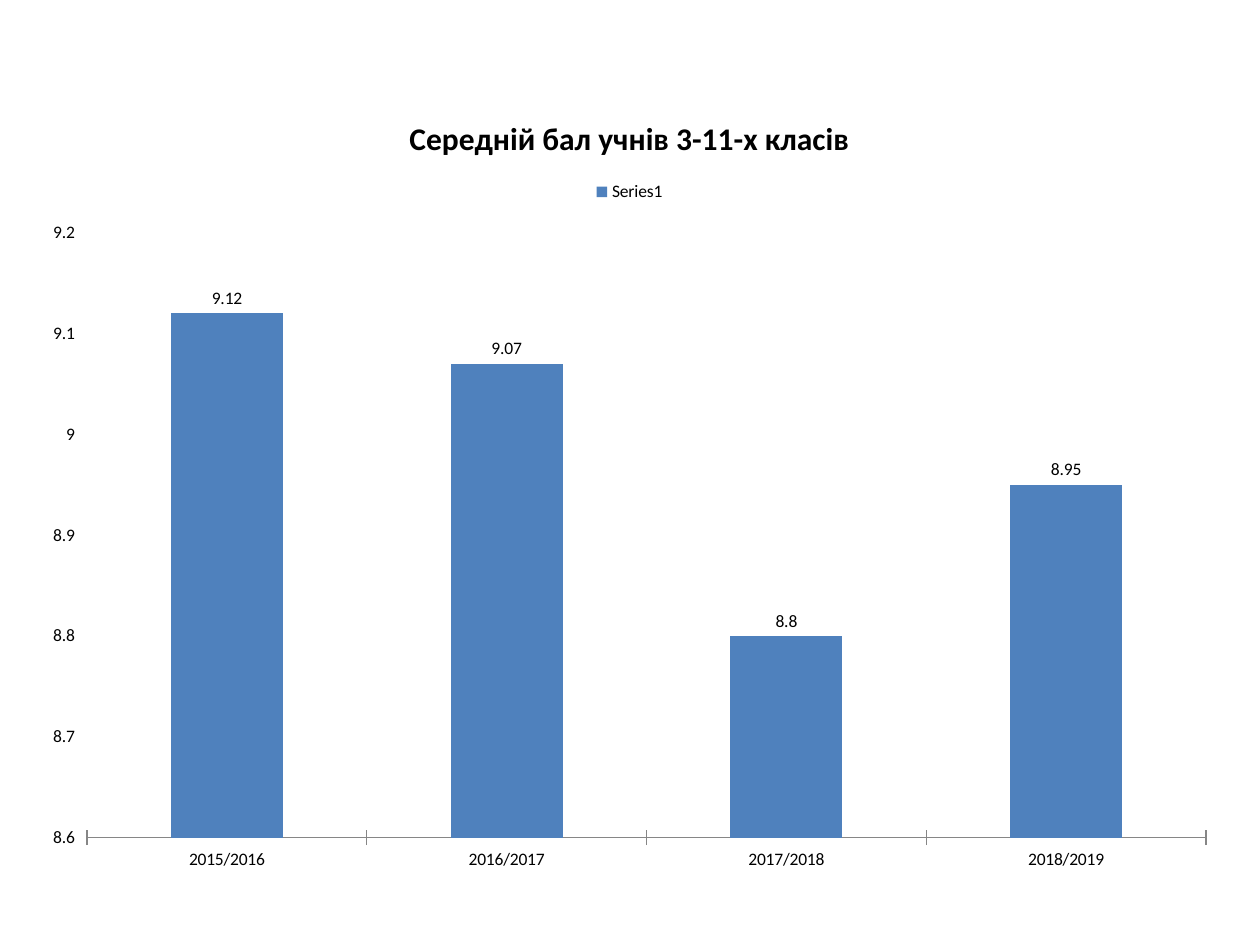
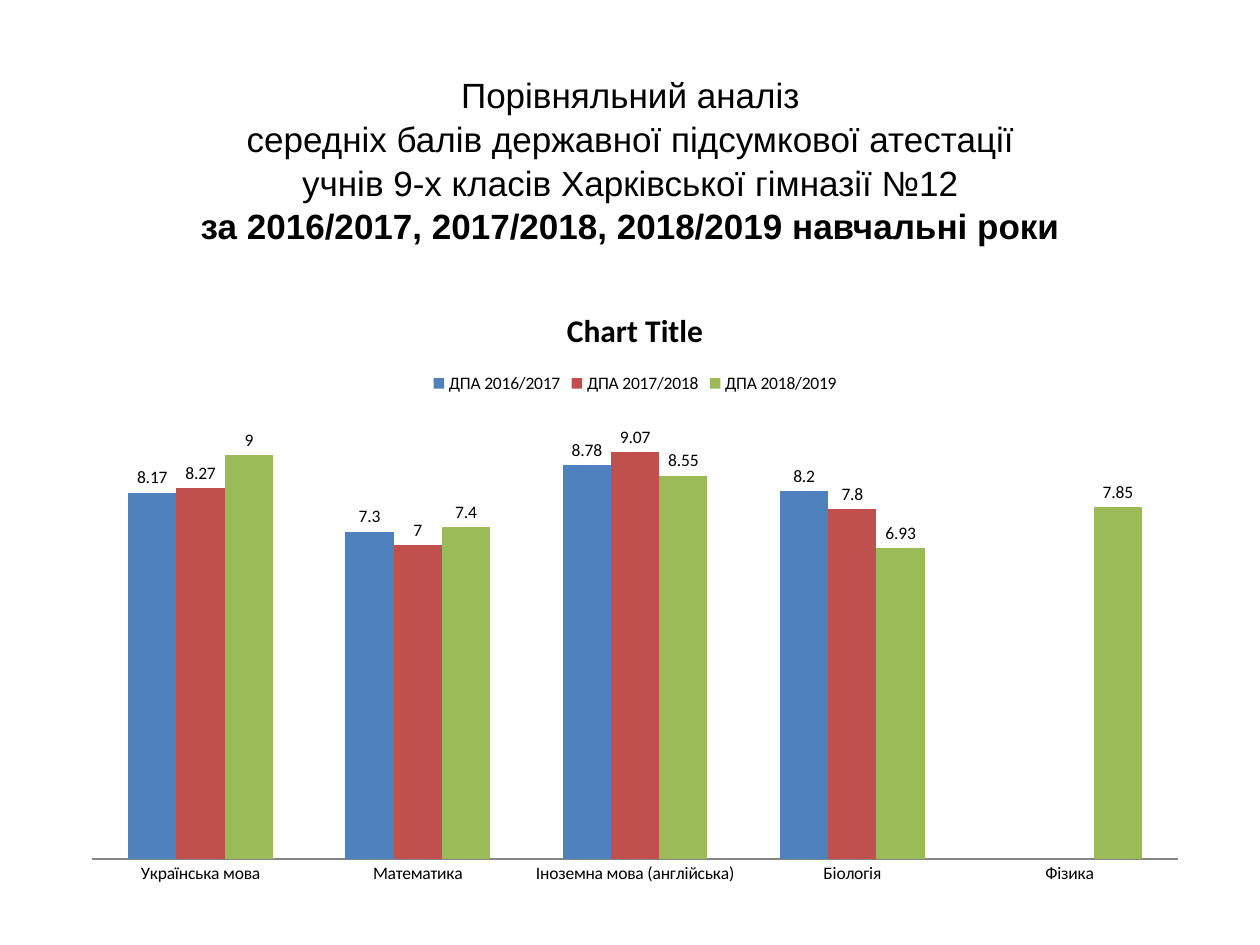
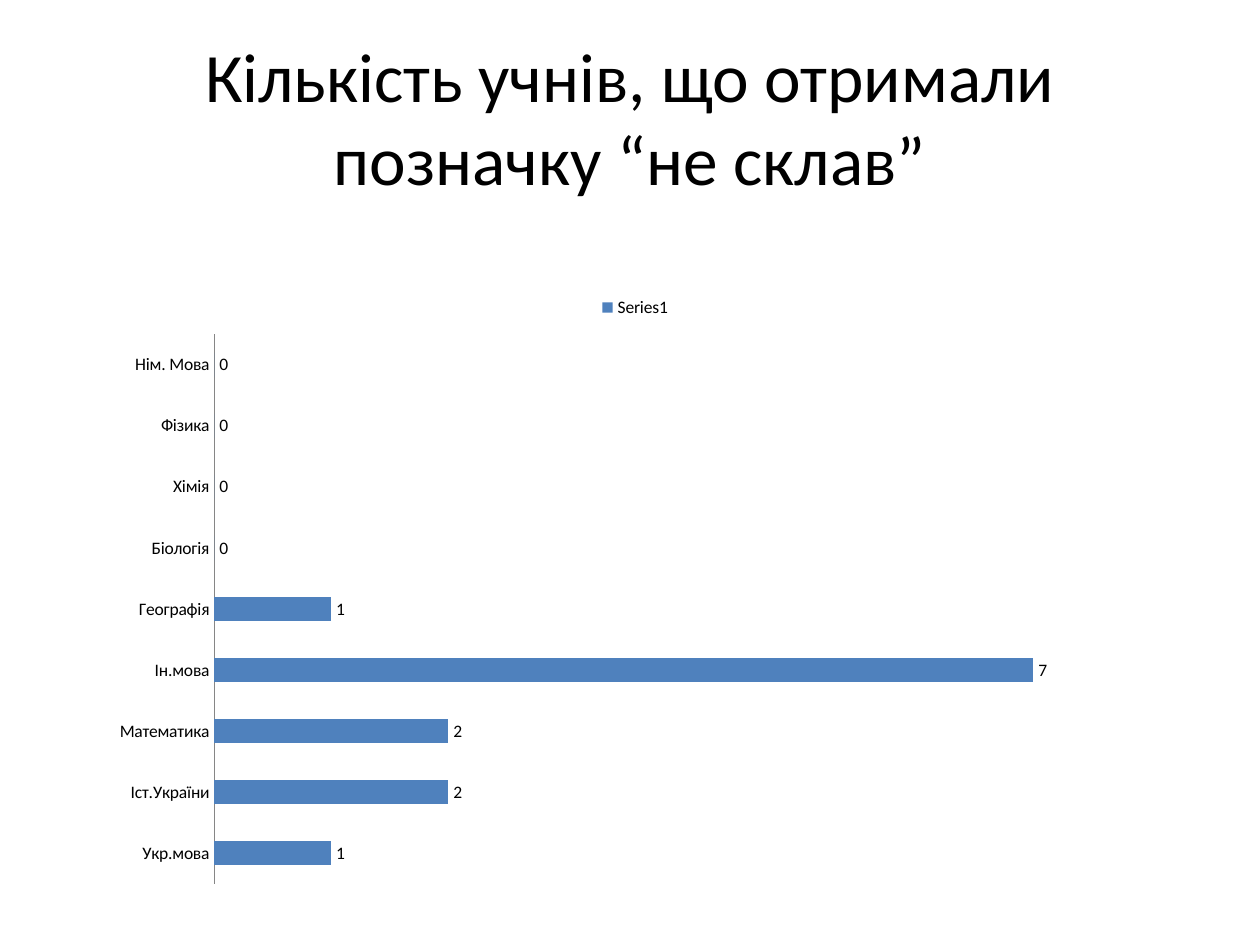
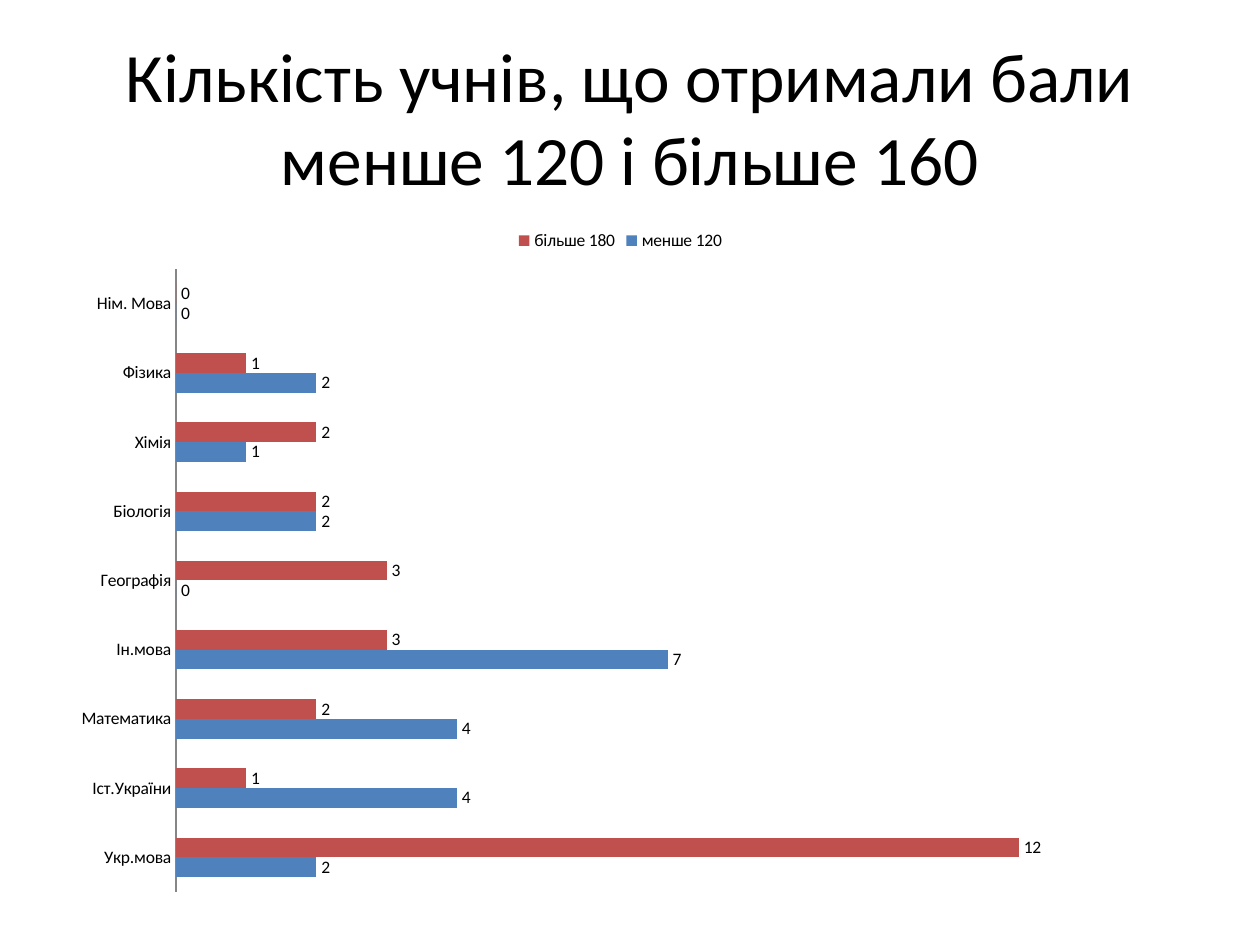
from pptx import Presentation
from pptx.chart.data import CategoryChartData
from pptx.dml.color import RGBColor
from pptx.enum.chart import (XL_CHART_TYPE as CT, XL_LABEL_POSITION as LP,
                             XL_LEGEND_POSITION as LEG, XL_TICK_MARK as TICK)
from pptx.enum.text import MSO_ANCHOR, MSO_AUTO_SIZE, PP_ALIGN
from pptx.util import Pt

BLACK, WHITE, AXIS = "000000", "FFFFFF", "868686"
BLUE, RED, GREEN = "4F81BD", "C0504D", "9BBB59"
FONT = "Calibri"
TITLE_ONLY, BLANK = 5, 6
TITLE_BOX = (36, 21.6, 648, 90)
SUBJECTS = ["Укр.мова", "Іст.України", "Математика", "Ін.мова", "Географія",
            "Біологія", "Хімія", "Фізика", "Нім. Мова"]


def rgb(value):
    return RGBColor.from_string(value)


def set_font(font, size, name=FONT, bold=False):
    font.size, font.name, font.bold = Pt(size), name, bold
    font.color.rgb = rgb(BLACK)


def add_title(slide, text, box=TITLE_BOX):
    sp = slide.shapes.title
    sp.left, sp.top, sp.width, sp.height = map(Pt, box)
    tf = sp.text_frame
    tf.text = text
    tf.auto_size = MSO_AUTO_SIZE.NONE
    tf.vertical_anchor = MSO_ANCHOR.MIDDLE
    p = tf.paragraphs[0]
    p.alignment = PP_ALIGN.CENTER
    set_font(p.font, 39.6)


def add_heading(slide, box, lines):
    tf = slide.shapes.add_textbox(*map(Pt, box)).text_frame
    tf.word_wrap = False
    tf.auto_size = MSO_AUTO_SIZE.SHAPE_TO_FIT_TEXT
    tf.vertical_anchor = MSO_ANCHOR.MIDDLE
    tf.text = "\n".join(lines)
    for p in tf.paragraphs:
        p.alignment = PP_ALIGN.CENTER
        p.line_spacing = 1.04
        set_font(p.font, 20, "Arial", bold=p.text == lines[-1])


def style_series(chart, colors):
    plot = chart.plots[0]
    plot.gap_width, plot.overlap = 150, 0
    plot.vary_by_categories = False
    plot.has_data_labels = True
    labels = plot.data_labels
    labels.show_value = True
    labels.position = LP.OUTSIDE_END
    set_font(labels.font, 10)
    for series, color in zip(plot.series, colors):
        series.invert_if_negative = False
        series.format.fill.solid()
        series.format.fill.fore_color.rgb = rgb(color)


def style_axes(chart, limits, step, show_values):
    cat, val = chart.category_axis, chart.value_axis
    cat.format.line.color.rgb = rgb(AXIS)
    cat.major_tick_mark = TICK.CROSS if show_values else TICK.NONE
    val.minimum_scale, val.maximum_scale = limits
    val.major_unit = step
    val.visible = show_values
    val.has_major_gridlines = show_values
    if show_values:
        val.major_tick_mark = TICK.CROSS
        val.format.line.fill.background()
        grid = val.major_gridlines.format.line
        grid.color.rgb = rgb(WHITE)
        grid.width = Pt(0.75)


def add_bars(slide, box, kind, cats, series, limits, step,
             title=None, show_values=False):
    data = CategoryChartData()
    data.categories = cats
    for name, values, _ in series:
        data.add_series(name, values)
    chart = slide.shapes.add_chart(kind, *map(Pt, box), data).chart
    set_font(chart.font, 10)
    chart.has_title = title is not None
    if title:
        tf = chart.chart_title.text_frame
        tf.text = title
        set_font(tf.paragraphs[0].font, 18, bold=True)
        chart.chart_title.include_in_layout = False
    chart.has_legend = True
    chart.legend.position = LEG.TOP
    chart.legend.include_in_layout = False
    style_series(chart, [color for _, _, color in series])
    style_axes(chart, limits, step, show_values)


def average_slide(slide):
    add_bars(slide, (16.6, 50.4, 686.2, 455.8), CT.COLUMN_CLUSTERED,
             ["2015/2016", "2016/2017", "2017/2018", "2018/2019"],
             [("Series1", [9.12, 9.07, 8.8, 8.95], BLUE)], (8.6, 9.2), 0.1,
             title="Середній бал учнів 3-11-х класів", show_values=True)


def attestation_slide(slide):
    add_heading(slide, (105.8, 38.9, 509, 104.4),
                ["Порівняльний аналіз",
                 "середніх балів державної підсумкової атестації",
                 "учнів 9-х класів Харківської гімназії №12",
                 "за 2016/2017, 2017/2018, 2018/2019 навчальні роки"])
    add_bars(slide, (39.6, 162, 646.6, 350), CT.COLUMN_CLUSTERED,
             ["Українська мова", "Математика", "Іноземна мова (англійська)",
              "Біологія", "Фізика"],
             [("ДПА 2016/2017", [8.17, 7.3, 8.78, 8.2, None], BLUE),
              ("ДПА 2017/2018", [8.27, 7, 9.07, 7.8, None], RED),
              ("ДПА 2018/2019", [9, 7.4, 8.55, 6.93, 7.85], GREEN)],
             (0, 10), 1, title="Chart Title")


def subjects_slide(slide, title, box, series, top, step):
    add_title(slide, title)
    add_bars(slide, box, CT.BAR_CLUSTERED, SUBJECTS, series, (0, top), step)


def main():
    prs = Presentation()
    prs.slide_width, prs.slide_height = Pt(720), Pt(540)

    def new_slide(layout):
        return prs.slides.add_slide(prs.slide_layouts[layout])

    average_slide(new_slide(BLANK))
    attestation_slide(new_slide(BLANK))
    subjects_slide(new_slide(TITLE_ONLY),
                   "Кількість учнів, що отримали позначку “не склав”",
                   (56.2, 162, 613.4, 350),
                   [("Series1", [1, 2, 2, 7, 1, 0, 0, 0, 0], BLUE)], 8, 1)
    subjects_slide(new_slide(TITLE_ONLY),
                   "Кількість учнів, що отримали бали менше 120 і більше 160",
                   (33.8, 123.8, 641.5, 393.8),
                   [("менше 120", [2, 4, 4, 7, 0, 2, 1, 2, 0], BLUE),
                    ("більше 180", [12, 1, 2, 3, 3, 2, 2, 1, 0], RED)], 14, 2)
    prs.save("out.pptx")


if __name__ == "__main__":
    main()
